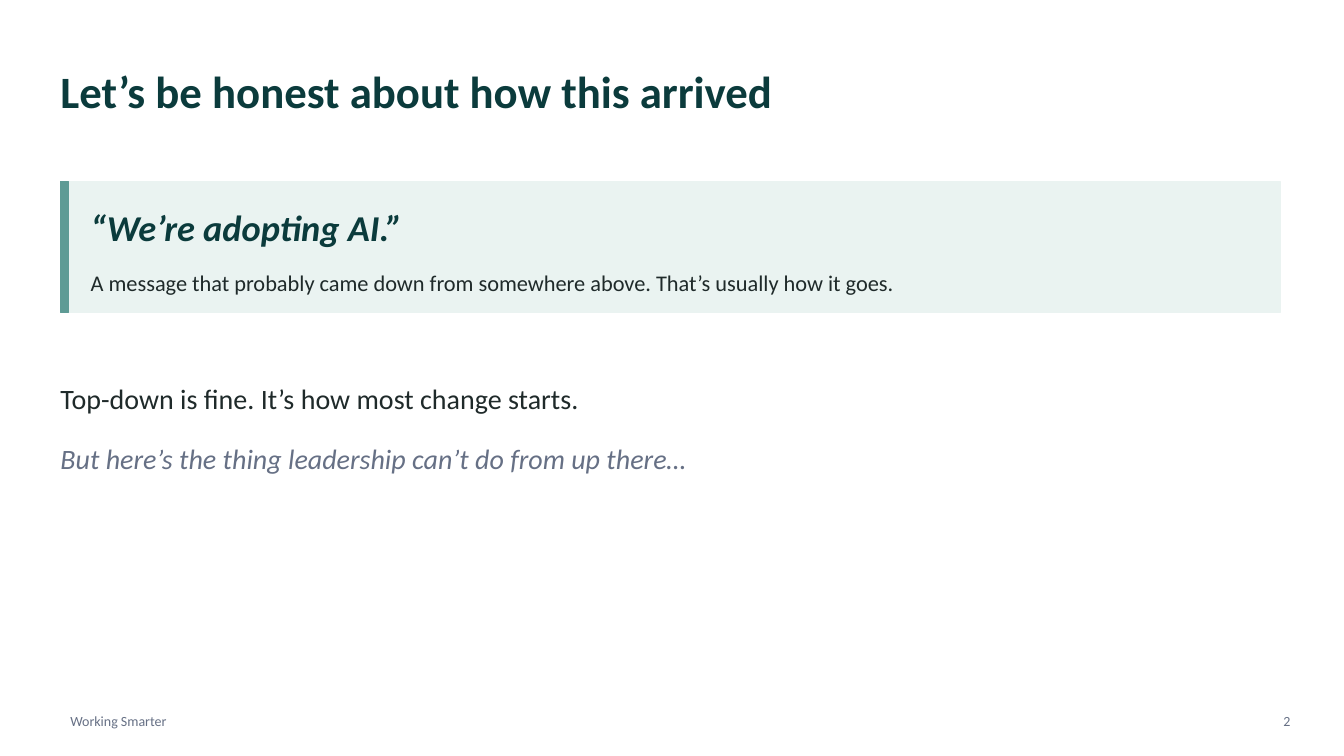
from dataclasses import dataclass

from pptx import Presentation
from pptx.dml.color import RGBColor
from pptx.enum.shapes import MSO_SHAPE
from pptx.enum.text import MSO_ANCHOR, PP_ALIGN
from pptx.slide import Slide
from pptx.util import Pt


@dataclass(frozen=True)
class Theme:
    font: str = "Calibri"
    heading: str = "0B3B3C"
    body: str = "1F2A2A"
    muted: str = "667085"
    panel: str = "EAF3F1"
    accent: str = "5E9B95"
    title_size: int = 32
    quote_size: int = 26
    statement_size: int = 20
    note_size: int = 16
    footer_size: int = 10


@dataclass(frozen=True)
class Frame:
    left: float
    top: float
    width: float
    height: float


@dataclass(frozen=True)
class Band:
    frame: Frame
    color: str


@dataclass(frozen=True)
class Line:
    text: str
    frame: Frame
    size: int
    color: str
    bold: bool = False
    italic: bool = False
    align: PP_ALIGN = PP_ALIGN.LEFT
    inset_x: float = 0
    inset_y: float = 0


THEME = Theme()

# Shared measures, in points
PAGE_WIDTH, PAGE_HEIGHT = 960, 540
MARGIN, CONTENT_WIDTH = 43.2, 871.2
QUOTE_LEFT, QUOTE_WIDTH = 64.8, 842.4
PANEL_TOP, PANEL_HEIGHT = 129.6, 93.6
FOOTER_TOP, FOOTER_HEIGHT = 504, 21.6
FOOTER_STYLE = {"size": THEME.footer_size, "color": THEME.muted,
                "inset_x": 7.2, "inset_y": 3.6}

# Quote panel and its accent bar
BANDS = [
    Band(Frame(MARGIN, PANEL_TOP, CONTENT_WIDTH, PANEL_HEIGHT), THEME.panel),
    Band(Frame(MARGIN, PANEL_TOP, 5.76, PANEL_HEIGHT), THEME.accent),
]

LINES = [
    # Title
    Line("Let’s be honest about how this arrived",
         Frame(MARGIN, 32.4, CONTENT_WIDTH, 64.8),
         THEME.title_size, THEME.heading, bold=True),
    # Quote and its note
    Line("“We’re adopting AI.”",
         Frame(QUOTE_LEFT, 140.4, QUOTE_WIDTH, 43.2),
         THEME.quote_size, THEME.heading, bold=True, italic=True),
    Line("A message that probably came down from somewhere above. "
         "That’s usually how it goes.",
         Frame(QUOTE_LEFT, 183.6, QUOTE_WIDTH, 36),
         THEME.note_size, THEME.body),
    # Statements
    Line("Top-down is fine. It’s how most change starts.",
         Frame(MARGIN, 266.4, CONTENT_WIDTH, 36),
         THEME.statement_size, THEME.body),
    Line("But here’s the thing leadership can’t do from up there…",
         Frame(MARGIN, 309.6, CONTENT_WIDTH, 36),
         THEME.statement_size, THEME.muted, italic=True),
    # Footer
    Line("Working Smarter", Frame(MARGIN, FOOTER_TOP, 288, FOOTER_HEIGHT),
         **FOOTER_STYLE),
    Line("2", Frame(892.8, FOOTER_TOP, 36, FOOTER_HEIGHT),
         align=PP_ALIGN.RIGHT, **FOOTER_STYLE),
]


def place(frame: Frame) -> tuple[Pt, Pt, Pt, Pt]:
    return Pt(frame.left), Pt(frame.top), Pt(frame.width), Pt(frame.height)


def set_format(target: object, values: dict[str, object]) -> None:
    for name, value in values.items():
        setattr(target, name, value)


def draw_band(page: Slide, band: Band) -> None:
    shape = page.shapes.add_shape(MSO_SHAPE.RECTANGLE, *place(band.frame))
    color = RGBColor.from_string(band.color)
    shape.shadow.inherit = False
    shape.fill.solid()
    shape.fill.fore_color.rgb = color
    shape.line.color.rgb = color
    shape.line.width = Pt(1)


def draw_line(page: Slide, line: Line) -> None:
    box = page.shapes.add_textbox(*place(line.frame)).text_frame
    set_format(box, {
        "word_wrap": True,
        "vertical_anchor": MSO_ANCHOR.MIDDLE,
        "margin_left": Pt(line.inset_x),
        "margin_right": Pt(line.inset_x),
        "margin_top": Pt(line.inset_y),
        "margin_bottom": Pt(line.inset_y),
    })
    para = box.paragraphs[0]
    para.alignment = line.align
    span = para.add_run()
    span.text = line.text
    set_format(span.font, {
        "name": THEME.font,
        "size": Pt(line.size),
        "bold": line.bold,
        "italic": line.italic,
    })
    span.font.color.rgb = RGBColor.from_string(line.color)


def main() -> None:
    deck = Presentation()
    deck.slide_width, deck.slide_height = Pt(PAGE_WIDTH), Pt(PAGE_HEIGHT)
    page = deck.slides.add_slide(deck.slide_layouts[6])
    for band in BANDS:
        draw_band(page, band)
    for line in LINES:
        draw_line(page, line)
    deck.save("out.pptx")


if __name__ == "__main__":
    main()
